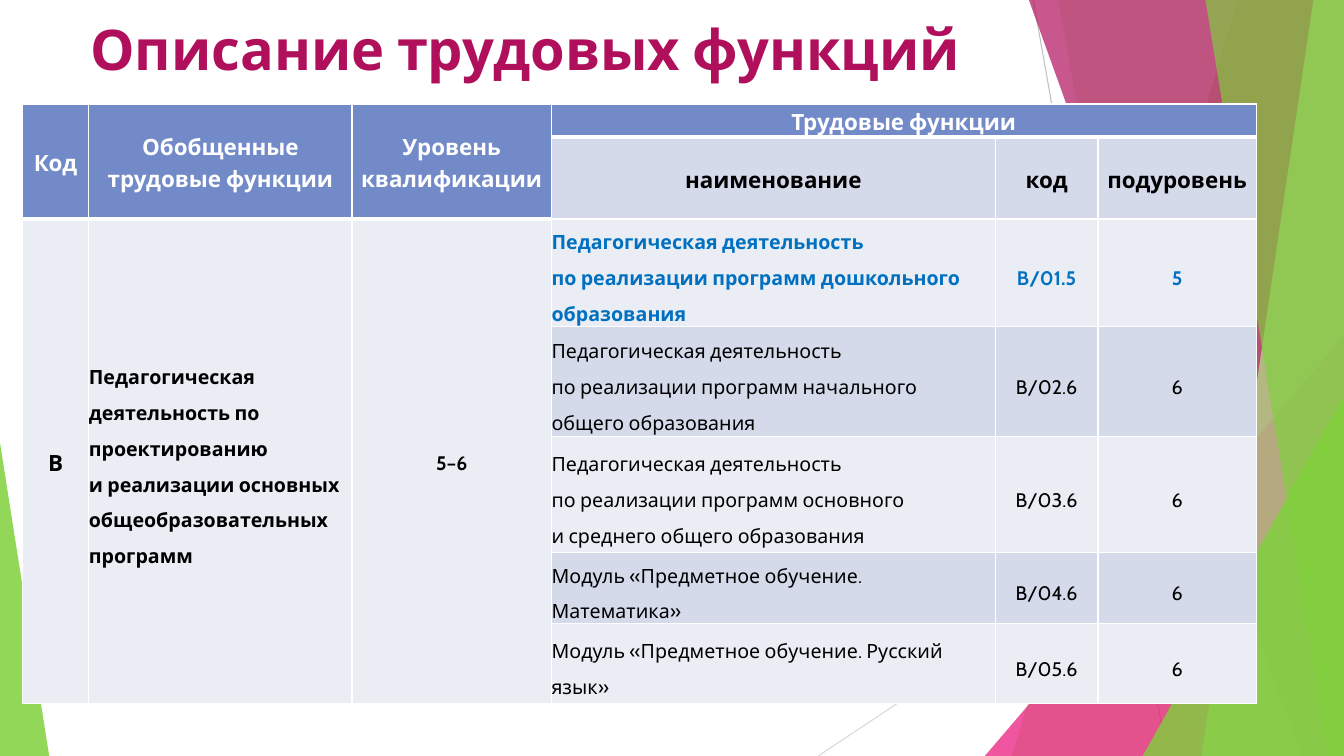
from lxml import etree
from pptx import Presentation
from pptx.dml.color import RGBColor
from pptx.enum.shapes import MSO_CONNECTOR, MSO_SHAPE
from pptx.enum.text import MSO_ANCHOR, MSO_AUTO_SIZE, PP_ALIGN
from pptx.oxml.ns import qn
from pptx.util import Cm, Pt

LINE = MSO_CONNECTOR.STRAIGHT
WEDGE = MSO_SHAPE.ISOSCELES_TRIANGLE
TOP, MIDDLE = MSO_ANCHOR.TOP, MSO_ANCHOR.MIDDLE
LEFT, CENTER = PP_ALIGN.LEFT, PP_ALIGN.CENTER
NO_FIT = MSO_AUTO_SIZE.NONE

WIDE, HIGH = 33.87, 19.05
FONT = "Cabin"
WHITE, BLACK, BLUE, GREEN = "FFFFFF", "000000", "0070C0", "7FD13B"
HEAD, DARK, PALE = "738AC8", "D5DAEB", "EBEDF5"

COLS = [1.68, 6.63, 5.03, 11.18, 2.59, 3.99]
ROWS = [0.84, 2.06, 2.69, 2.77, 2.92, 1.8, 2.01]
# Top left and bottom right cell of each merged block
SPANS = [((0, 0), (1, 0)), ((0, 1), (1, 1)), ((0, 2), (1, 2)),
         ((0, 3), (0, 5)), ((2, 0), (6, 0)), ((2, 1), (6, 1)),
         ((2, 2), (6, 2))]
WORK = "Педагогическая деятельность"
GRID = [
    ["Код", "Обобщенные трудовые функции", "Уровень квалификации",
     "Трудовые функции", "", ""],
    ["", "", "", "наименование", "код", "подуровень"],
    ["В", WORK + " по проектированию\n"
     "и реализации основных общеобразовательных программ", "5–6",
     WORK + "\nпо реализации программ дошкольного образования",
     "B/01.5", "5"],
    ["", "", "", WORK + "\nпо реализации программ начального\n"
     "общего образования", "B/02.6", "6"],
    ["", "", "", WORK + "\nпо реализации программ основного\n"
     "и среднего общего образования", "B/03.6", "6"],
    ["", "", "", "Модуль «Предметное обучение. Математика»", "B/04.6", "6"],
    ["", "", "", "Модуль «Предметное обучение. Русский язык»",
     "B/05.6", "6"],
]


def color(code):
    return RGBColor.from_string(code)


def apply(target, values):
    for name, value in values.items():
        setattr(target, name, value)


def write(frame, text, size, tint, bold, align, space=1.0):
    frame.text = text
    for para in frame.paragraphs:
        apply(para, {"alignment": align, "line_spacing": space,
                     "space_before": Pt(0), "space_after": Pt(0)})
        for run in para.runs:
            apply(run.font, {"name": FONT, "size": Pt(size), "bold": bold})
            run.font.color.rgb = color(tint)


def paint(shape, tint, alpha):
    shape.shadow.inherit = False
    shape.fill.solid()
    shape.fill.fore_color.rgb = color(tint)
    shape.line.fill.background()
    mark = shape.element.spPr.find(qn("a:solidFill"))[0]
    etree.SubElement(mark, qn("a:alpha"), val=str(alpha * 1000))


def add_line(shapes, start, end, tint):
    line = shapes.add_connector(LINE, *map(Cm, start + end))
    line.line.color.rgb = color(tint)
    line.line.width = Pt(0.75)
    etree.SubElement(line.element.spPr, qn("a:effectLst"))


def add_band(shapes, top, base, tint, alpha):
    """Fill the slide from a slanted left edge to its right side."""
    pen = shapes.build_freeform(Cm(top), 0)
    corners = [(WIDE, 0), (WIDE, HIGH), (base, HIGH)]
    pen.add_line_segments([(Cm(x), Cm(y)) for x, y in corners], close=True)
    paint(pen.convert_to_shape(), tint, alpha)


def add_wedge(shapes, box, peak, tint, alpha):
    wedge = shapes.add_shape(WEDGE, *map(Cm, box))
    wedge.adjustments[0] = peak
    paint(wedge, tint, alpha)


def add_decor(shapes):
    add_line(shapes, (26.04, 0), (29.41, HIGH), "BFBFBF")
    add_line(shapes, (WIDE, 10.24), (20.62, HIGH), "D9D9D9")
    add_band(shapes, 31.19, 25.5, GREEN, 30)
    add_band(shapes, 26.67, 30.05, GREEN, 20)
    add_wedge(shapes, (24.82, 8.46, 9.05, 10.59), 1, "EA157A", 72)
    add_band(shapes, 25.93, 32.79, "B0105C", 70)
    add_band(shapes, 33.1, 30.28, "B2E389", 70)
    add_band(shapes, 30.38, 33.48, GREEN, 65)
    add_wedge(shapes, (28.8, 9.98, 5.07, 9.07), 1, GREEN, 80)
    add_wedge(shapes, (0, 11.15, 1.24, 7.9), 0, GREEN, 85)


def set_title(slide):
    title = slide.shapes.title
    apply(title, {"left": Cm(0.69), "top": Cm(0.23),
                  "width": Cm(25.1), "height": Cm(1.5)})
    apply(title.text_frame, {"auto_size": NO_FIT, "word_wrap": True,
                             "vertical_anchor": TOP})
    write(title.text_frame, "Описание трудовых функций", 40, "AF0F5B",
          True, CENTER)
    # Bring the title in front of the decor
    slide.shapes.element.append(title.element)


def add_edges(cell, thick):
    props = cell._tc.get_or_add_tcPr()
    for side in "LRTB":
        width = Pt(3 if thick and side == "B" else 1)
        edge = etree.SubElement(props, qn("a:ln" + side), w=str(width))
        fill = etree.SubElement(edge, qn("a:solidFill"))
        etree.SubElement(fill, qn("a:srgbClr"), val=WHITE)


def style_cell(cell, row, col):
    head = row == 0 or (row == 1 and col < 3)
    body = row > 1
    add_edges(cell, head)
    cell.fill.solid()
    cell.fill.fore_color.rgb = color(
        HEAD if head else DARK if row % 2 and col > 2 else PALE)
    apply(cell, {"vertical_anchor": MIDDLE, "margin_left": 0,
                 "margin_right": 0, "margin_top": 0, "margin_bottom": 0})
    tint = WHITE if head else BLUE if row == 2 and col > 2 else BLACK
    size = 14 if body and col else 16
    align = LEFT if body and col in (1, 3) else CENTER
    space = 1.5 if body and col not in (0, 2) else 1.15
    write(cell.text_frame, GRID[row][col], size, tint, row < 3, align, space)


def add_grid(shapes):
    box = (0.56, 2.62, sum(COLS), sum(ROWS))
    table = shapes.add_table(len(ROWS), len(COLS), *map(Cm, box)).table
    apply(table, {"first_row": False, "horz_banding": False})
    for col, width in zip(table.columns, COLS):
        col.width = Cm(width)
    for row, height in zip(table.rows, ROWS):
        row.height = Cm(height)
    for row in range(len(ROWS)):
        for col in range(len(COLS)):
            style_cell(table.cell(row, col), row, col)
    for first, last in SPANS:
        table.cell(*first).merge(table.cell(*last))


def main():
    deck = Presentation()
    apply(deck, {"slide_width": Cm(WIDE), "slide_height": Cm(HIGH)})
    slide = deck.slides.add_slide(deck.slide_layouts[5])
    add_decor(slide.shapes)
    set_title(slide)
    add_grid(slide.shapes)
    deck.save("out.pptx")


if __name__ == "__main__":
    main()
